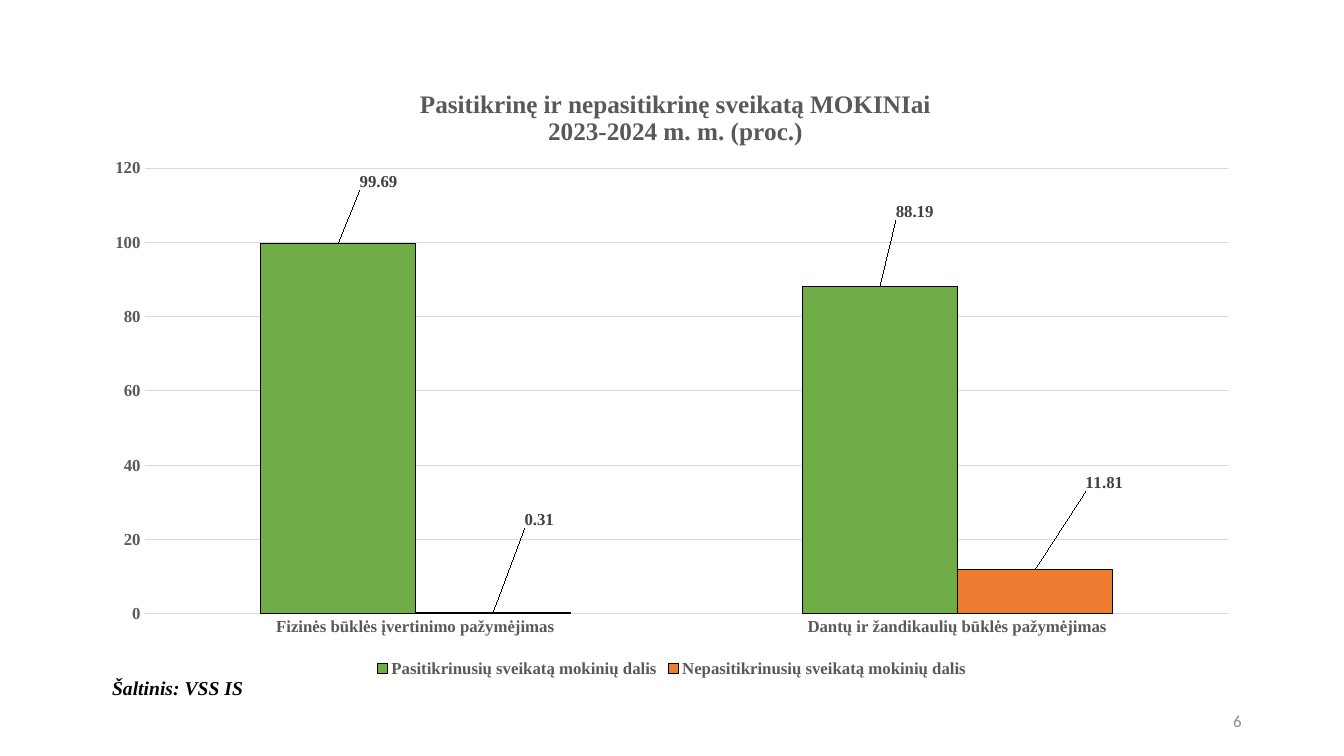
from lxml import etree
from pptx import Presentation
from pptx.chart.data import CategoryChartData
from pptx.dml.color import RGBColor
from pptx.enum.chart import (XL_CHART_TYPE, XL_LABEL_POSITION,
                             XL_LEGEND_POSITION, XL_TICK_MARK)
from pptx.enum.text import MSO_ANCHOR, PP_ALIGN
from pptx.oxml.ns import qn
from pptx.util import Pt

CLUSTERED = XL_CHART_TYPE.COLUMN_CLUSTERED
OUTSIDE_END = XL_LABEL_POSITION.OUTSIDE_END
BOTTOM = XL_LEGEND_POSITION.BOTTOM
NO_TICK = XL_TICK_MARK.NONE
MIDDLE = MSO_ANCHOR.MIDDLE
LEFT, RIGHT = PP_ALIGN.LEFT, PP_ALIGN.RIGHT

BLACK = RGBColor(0x00, 0x00, 0x00)
TEXT_GREY = RGBColor(0x59, 0x59, 0x59)
LABEL_GREY = RGBColor(0x40, 0x40, 0x40)
NUMBER_GREY = RGBColor(0x8C, 0x8C, 0x8C)
GRID_GREY = RGBColor(0xD9, 0xD9, 0xD9)
GREEN = RGBColor(0x70, 0xAD, 0x47)
ORANGE = RGBColor(0xED, 0x7D, 0x31)
SERIF, SANS = "Times New Roman", "Calibri"

CATEGORIES = ["Fizinės būklės įvertinimo pažymėjimas",
              "Dantų ir žandikaulių būklės pažymėjimas"]
# Name, values, fill, label shifts as shares of the chart's width and height
CHECKUPS = [
    ("Pasitikrinusių sveikatą mokinių dalis", (99.69, 88.19), GREEN,
     ((0.035, -0.08), (0.03, -0.1))),
    ("Nepasitikrinusių sveikatą mokinių dalis", (0.31, 11.81), ORANGE,
     ((0.04, -0.13), (0.06, -0.12))),
]


def style_font(font, size, color, name=SERIF, bold=True, italic=False):
    font.size, font.name = Pt(size), name
    font.bold, font.italic = bold, italic
    font.color.rgb = color


def manual_layout(**settings):
    layout = etree.Element(qn("c:layout"))
    manual = etree.SubElement(layout, qn("c:manualLayout"))
    for tag, value in settings.items():
        etree.SubElement(manual, qn("c:" + tag)).set("val", str(value))
    return layout


def replace_layout(parent, layout, index):
    for old in parent.findall(qn("c:layout")):
        parent.remove(old)
    parent.insert(index, layout)


def style_title(chart):
    frame = chart.chart_title.text_frame
    frame.text = "Pasitikrinę ir nepasitikrinę sveikatą MOKINIai\n2023-2024 m. m. (proc.)"
    for paragraph in frame.paragraphs:
        style_font(paragraph.runs[0].font, 18, TEXT_GREY)
    title = chart.chart_title._element
    replace_layout(title, manual_layout(xMode="edge", yMode="edge", x=0.28, y=0.035), 1)
    chart.chart_title.include_in_layout = False


def style_axes(chart):
    for axis in (chart.category_axis, chart.value_axis):
        axis.major_tick_mark = axis.minor_tick_mark = NO_TICK
        axis.format.line.fill.background()
        style_font(axis.tick_labels.font, 12, TEXT_GREY)
    values = chart.value_axis
    values.minimum_scale, values.maximum_scale, values.major_unit = 0, 120, 20
    grid = values.major_gridlines.format.line
    grid.color.rgb, grid.width = GRID_GREY, Pt(0.75)


def style_series(series, color, shifts):
    series.format.fill.solid()
    series.format.fill.fore_color.rgb = color
    series.format.line.color.rgb = BLACK
    series.format.line.width = Pt(0.75)
    labels = series.data_labels
    labels.show_value, labels.position = True, OUTSIDE_END
    style_font(labels.font, 12, LABEL_GREY)
    for index in range(len(shifts)):
        label = series.points[index].data_label
        style_font(label.font, 12, LABEL_GREY)
        label.position = OUTSIDE_END
    for label, (x, y) in zip(series._element.iter(qn("c:dLbl")), shifts):
        replace_layout(label, manual_layout(x=x, y=y), 1)


def add_checkup_chart(slide, left, top, width, height):
    data = CategoryChartData()
    data.categories = CATEGORIES
    for name, values, _, _ in CHECKUPS:
        data.add_series(name, values)
    chart = slide.shapes.add_chart(CLUSTERED, Pt(left), Pt(top),
                                   Pt(width), Pt(height), data).chart
    style_font(chart.font, 10, BLACK, SANS, bold=False)
    style_title(chart)
    style_axes(chart)
    plot = chart.plots[0]
    plot.gap_width, plot.overlap, plot.vary_by_categories = 150, 0, False
    for series, (_, _, color, shifts) in zip(plot.series, CHECKUPS):
        style_series(series, color, shifts)
    chart.has_legend = True
    chart.legend.position = BOTTOM
    chart.legend.include_in_layout = False
    style_font(chart.legend.font, 12, TEXT_GREY)
    # Inner plot area
    plot_area = chart._chartSpace.find(".//" + qn("c:plotArea"))
    replace_layout(plot_area, manual_layout(
        layoutTarget="inner", xMode="edge", yMode="edge",
        x=0.045, y=0.168, w=0.935, h=0.722), 0)


def add_footer_text(slide, text, left, top, width, height, align, wrap, **font):
    frame = slide.shapes.add_textbox(Pt(left), Pt(top), Pt(width), Pt(height)).text_frame
    frame.word_wrap = wrap
    frame.vertical_anchor = MIDDLE
    frame.text = text
    frame.paragraphs[0].alignment = align
    style_font(frame.paragraphs[0].runs[0].font, **font)


def build_checkup_slide(prs):
    slide = prs.slides.add_slide(prs.slide_layouts[6])
    add_checkup_chart(slide, 66, 46, 828, 441)
    # Source note and slide number
    add_footer_text(slide, "Šaltinis: VSS IS", 73, 479, 108.5, 24.5, LEFT, False,
                    size=14, color=BLACK, italic=True)
    add_footer_text(slide, "6", 678, 500.5, 216, 28.75, RIGHT, True,
                    size=12, color=NUMBER_GREY, name=SANS, bold=False)


def main():
    prs = Presentation()
    prs.slide_width, prs.slide_height = Pt(960), Pt(540)
    build_checkup_slide(prs)
    prs.save("out.pptx")


if __name__ == "__main__":
    main()
